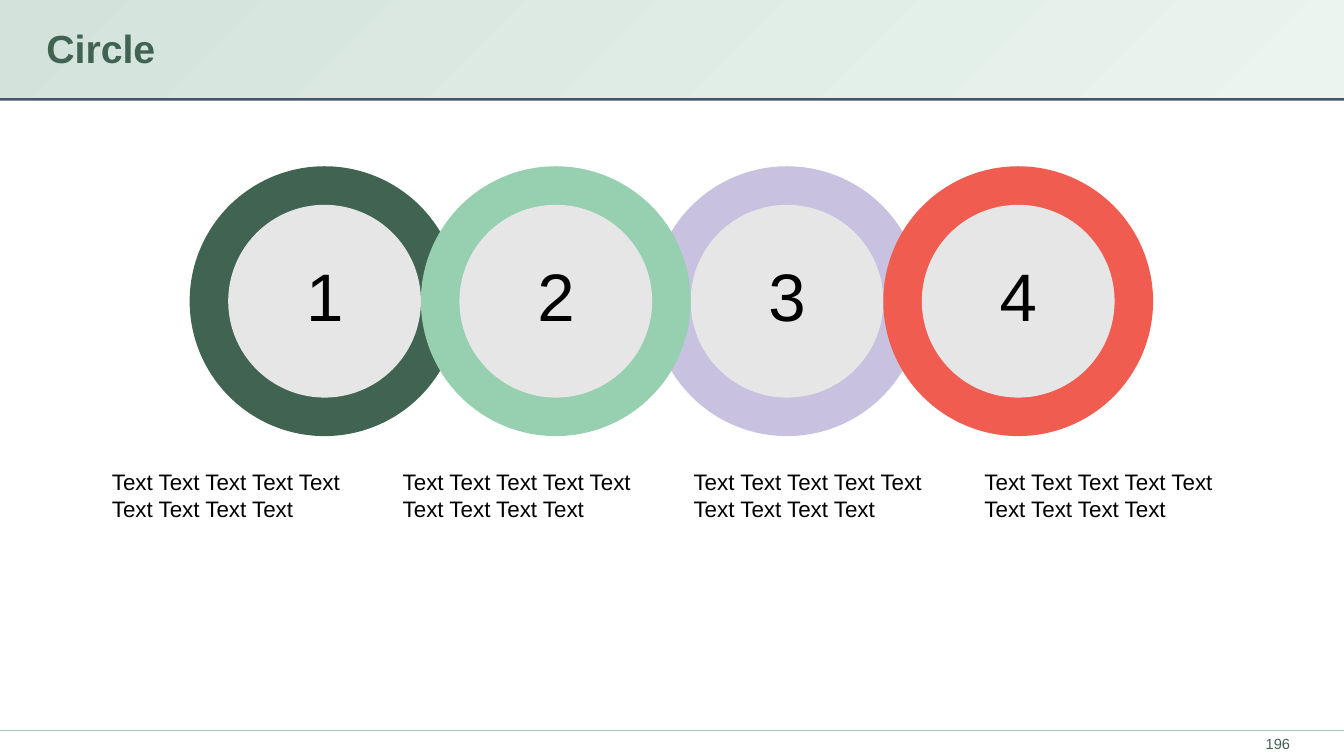
from lxml import etree
from pptx import Presentation
from pptx.dml.color import RGBColor as RGB
from pptx.enum.shapes import MSO_CONNECTOR as Conn, MSO_SHAPE as Kind
from pptx.enum.text import MSO_ANCHOR as Anchor, PP_ALIGN as Align
from pptx.oxml.ns import qn
from pptx.util import Cm, Pt

WIDE, HIGH = 33.87, 19.05
GREEN = "406352"
RINGS = [GREEN, "97D0B1", "C8C2E0", "F05C4F"]
STACK = [2, 0, 1, 3]


def tint(code):
    """Turn a hex string into a colour."""
    return RGB.from_string(code)


def shape(slide, kind, box, color):
    """Add a plain filled shape without outline or shadow."""
    item = slide.shapes.add_shape(kind, *map(Cm, box))
    item.shadow.inherit = False
    item.fill.solid()
    item.fill.fore_color.rgb = tint(color)
    item.line.fill.background()
    return item


def label(slide, box, text, size, color="000000", bold=False,
          align=Align.LEFT, anchor=Anchor.TOP, inset=(0.25, 0.13)):
    """Add a wrapped text box holding one run."""
    frame = slide.shapes.add_textbox(*map(Cm, box)).text_frame
    frame.word_wrap = True
    frame.vertical_anchor = anchor
    frame.margin_left = frame.margin_right = Cm(inset[0])
    frame.margin_top = frame.margin_bottom = Cm(inset[1])
    para = frame.paragraphs[0]
    para.alignment = align
    run = para.add_run()
    run.text = text
    font = run.font
    font.name, font.size, font.bold = "Arial", Pt(size), bold
    font.color.rgb = tint(color)


def header(slide, box, title):
    """Draw the title band with its dark rule."""
    left, top, wide, high = box
    shape(slide, Kind.RECTANGLE, (left, top + high - 0.05, wide, 0.13), "44546A")
    fill = shape(slide, Kind.RECTANGLE, box, "D3E3DC").fill
    fill.gradient()
    fill.gradient_angle = 315
    for stop, code in zip(fill.gradient_stops, ["D3E3DC", "E9F5EE"]):
        stop.color.rgb = tint(code)
    label(slide, (left + 1.17, top + 0.2, wide - 2.35, 2.03), title, 28, GREEN,
          bold=True, anchor=Anchor.MIDDLE, inset=(0, 0))


def footer(slide, box, number):
    """Draw the thin bottom line and the page number."""
    left, top, wide, high = box
    line = slide.shapes.add_connector(
        Conn.STRAIGHT, Cm(left), Cm(top), Cm(left + wide), Cm(top))
    line.line.color.rgb = tint("A9C8B9")
    line.line.width = Pt(0.75)
    etree.SubElement(line._element.spPr, qn("a:effectLst"))
    label(slide, (left + wide - 2.15, top + 0.03, 0.97, high - 0.05), number, 10.5,
          GREEN, align=Align.CENTER, anchor=Anchor.MIDDLE, inset=(0, 0))


def chain(slide, box):
    """Draw overlapping rings across the box and number them."""
    left, top, wide, size = box
    step = (wide - size) / (len(RINGS) - 1)
    band = size / 7
    for i in STACK:
        x = left + i * step
        core = size - 2 * band
        shape(slide, Kind.OVAL, (x, top, size, size), RINGS[i])
        shape(slide, Kind.OVAL, (x + band, top + band, core, core), "E7E6E6")
    for i in range(len(RINGS)):
        spot = (left + i * step + size / 2 - 2.13, top + 2.08, 4.27, 2.31)
        label(slide, spot, str(i + 1), 48, align=Align.CENTER)


def captions(slide, box, texts):
    """Spread the captions evenly across the box."""
    left, top, wide, high = box
    each = 6.71
    step = (wide - each) / (len(texts) - 1)
    for i, text in enumerate(texts):
        label(slide, (left + i * step, top, each, high), text, 16)


def main():
    """Build and save the slide."""
    deck = Presentation()
    deck.slide_width, deck.slide_height = Cm(WIDE), Cm(HIGH)
    slide = deck.slides.add_slide(deck.slide_layouts[6])
    header(slide, (0, 0, WIDE, 2.46), "Circle")
    footer(slide, (0, 18.41, WIDE, 0.64), "196")
    chain(slide, (4.78, 4.19, 24.28, 6.8))
    captions(slide, (2.57, 11.66, 28.7, 1.63),
             ["Text Text Text Text Text Text Text Text Text"] * 4)
    deck.save("out.pptx")


if __name__ == "__main__":
    main()
